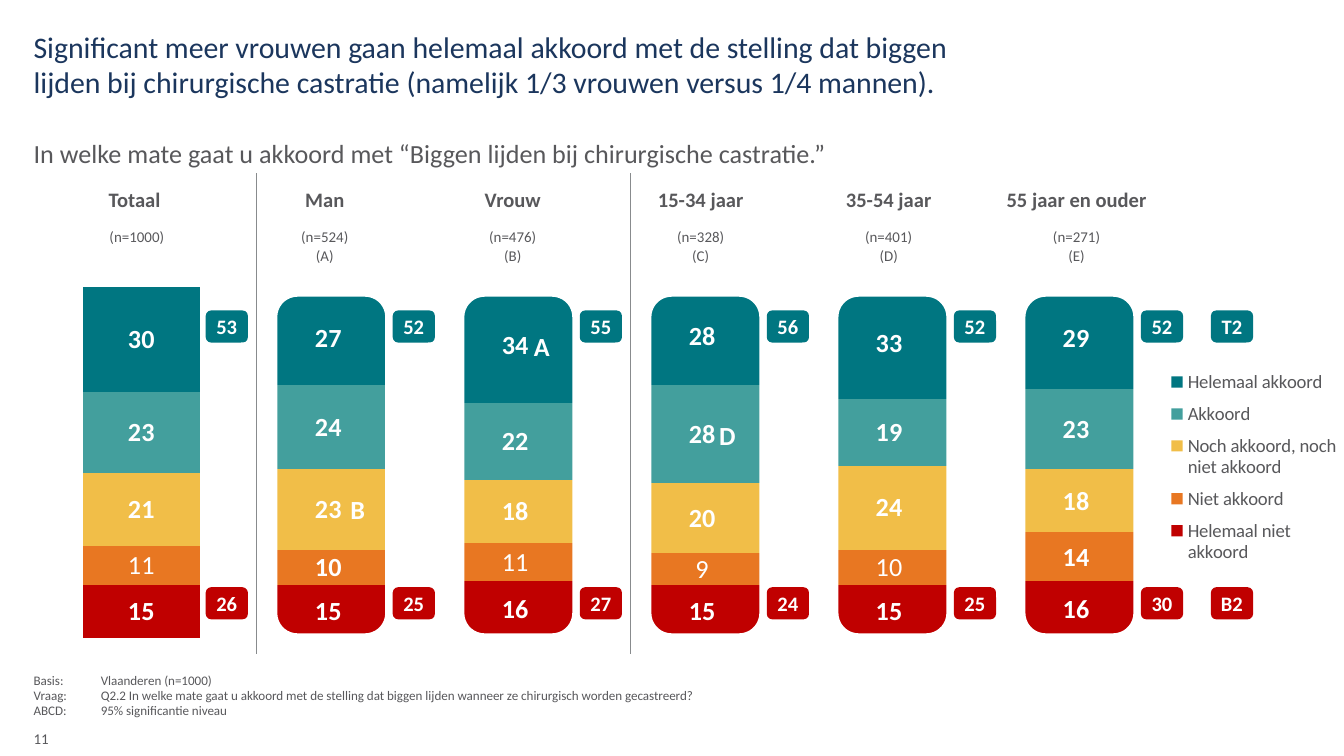
import math

import lxml.etree
import pptx
import pptx.chart.data
import pptx.dml.color
import pptx.enum.chart
import pptx.enum.shapes
import pptx.enum.text
import pptx.oxml
import pptx.oxml.ns
import pptx.util

Pt = pptx.util.Pt
RGBColor = pptx.dml.color.RGBColor
ALIGN = pptx.enum.text.PP_ALIGN
ANCHOR = pptx.enum.text.MSO_ANCHOR
qn = pptx.oxml.ns.qn

NAVY = RGBColor(0x1B, 0x36, 0x5D)
GREY = RGBColor(0x58, 0x58, 0x5B)
RULE = RGBColor(0x88, 0x8B, 0x8D)
WHITE = RGBColor(0xFF, 0xFF, 0xFF)
TEAL = RGBColor(0x00, 0x76, 0x81)
MINT = RGBColor(0x43, 0x9F, 0x9D)
YELLOW = RGBColor(0xF1, 0xBE, 0x48)
ORANGE = RGBColor(0xE8, 0x77, 0x22)
RED = RGBColor(0xC0, 0x00, 0x00)

PITCH = 100.2
HEADINGS = [
    ["Totaal ", "Man", "Vrouw", "15-34 jaar", "35-54 jaar", "55 jaar en ouder"],
    ["(n=1000)", "(n=524)", "(n=476)", "(n=328)", "(n=401)", "(n=271)"],
    ["", "(A)", "(B)", "(C)", "(D)", "(E)"],
]
SERIES = [
    ("Helemaal niet akkoord", [15, 15, 16, 15, 15, 16], RED, []),
    ("Niet akkoord", [11, 10, 11, 9, 10, 14], ORANGE, [0, 2, 3, 4]),
    ("Noch akkoord, noch niet akkoord", [21, 23, 18, 20, 24, 18], YELLOW, []),
    ("Akkoord", [23, 24, 22, 28, 19, 23], MINT, []),
    ("Helemaal akkoord", [30, 27, 34, 28, 33, 29], TEAL, []),
]
TOP_TWO = ["53", "52", "55", "56", "52", "52"]
BOTTOM_TWO = ["26", "25", "27", "24", "25", "30"]


class SlideBuilder:
    """Holds the style and the current slide and adds each kind of element."""

    def __init__(self, s, font="Calibri"):
        self.s = s
        self.font = font

    def style(self, font, size, color, bold=False):
        font.name, font.size, font.bold = self.font, Pt(size), bold
        font.color.rgb = color

    def add_lines(self, tf, lines, size, color, bold=False, align=ALIGN.LEFT, spacing=None):
        for i, line in enumerate(lines):
            p = tf.paragraphs[0] if i == 0 else tf.add_paragraph()
            p.alignment, p.space_before, p.line_spacing = align, Pt(0), spacing
            r = p.add_run()
            r.text = line
            self.style(r.font, size, color, bold)

    def frame_text(self, tf, anchor=ANCHOR.TOP, wrap=True, insets=(0, 0)):
        tf.margin_left = tf.margin_right = Pt(insets[0])
        tf.margin_top = tf.margin_bottom = Pt(insets[1])
        tf.auto_size = pptx.enum.text.MSO_AUTO_SIZE.NONE
        tf.vertical_anchor, tf.word_wrap = anchor, wrap

    def placeholder(self, idx, box, lines, size, color, spacing=None, tab=None):
        sp = self.s.placeholders[idx]
        sp.left, sp.top, sp.width, sp.height = map(Pt, box)
        self.frame_text(sp.text_frame)
        self.add_lines(sp.text_frame, lines, size, color, spacing=spacing)
        for p in sp.text_frame.paragraphs:
            pPr = p._p.get_or_add_pPr()
            pPr.set("marL", "0")
            pPr.set("indent", "0")
            lxml.etree.SubElement(pPr, qn("a:buNone"))
            if tab:
                tabs = lxml.etree.SubElement(pPr, qn("a:tabLst"))
                lxml.etree.SubElement(tabs, qn("a:tab"), pos=str(Pt(tab)), algn="l")

    def text(self, box, text, size, color, **kw):
        sp = self.s.shapes.add_textbox(*map(Pt, box))
        self.frame_text(sp.text_frame, kw.pop("anchor", ANCHOR.TOP), False)
        self.add_lines(sp.text_frame, [text], size, color, **kw)

    def table(self, box, rows, heights):
        table = self.s.shapes.add_table(len(rows), len(rows[0]), *map(Pt, box)).table
        table.first_row = table.horz_banding = False
        for i, (row, height) in enumerate(zip(rows, heights)):
            table.rows[i].height = Pt(height)
            for j, text in enumerate(row):
                cell = table.cell(i, j)
                cell.fill.background()
                cell.vertical_anchor = ANCHOR.MIDDLE
                cell.margin_left = cell.margin_right = cell.margin_top = cell.margin_bottom = 0
                if text:
                    self.add_lines(cell.text_frame, [text], 8 if i else 11, GREY, i == 0, ALIGN.CENTER)
                else:
                    p = cell.text_frame.paragraphs[0]
                    lxml.etree.SubElement(p._p, qn("a:endParaRPr"), sz="800")

    def layout(self, parent, index, **values):
        for old in parent.findall(qn("c:layout")):
            parent.remove(old)
        layout = lxml.etree.Element(qn("c:layout"))
        manual = lxml.etree.SubElement(layout, qn("c:manualLayout"))
        for tag, value in values.items():
            lxml.etree.SubElement(manual, qn("c:" + tag), val=str(value))
        parent.insert(index, layout)

    def chart(self, box, series):
        data = pptx.chart.data.CategoryChartData()
        data.categories = ["1", "2", "3", "4", "5", "6"]
        for name, values, _, _ in series:
            data.add_series(name, values)
        kind = pptx.enum.chart.XL_CHART_TYPE.COLUMN_STACKED
        chart = self.s.shapes.add_chart(kind, *map(Pt, box), data).chart
        chart.font.name, chart.font.size = self.font, Pt(18)
        chart.has_title = False
        chart.value_axis.minimum_scale, chart.value_axis.maximum_scale = 0, 100
        chart.value_axis.has_major_gridlines = False
        chart.value_axis.visible = chart.category_axis.visible = False
        plot = chart.plots[0]
        plot.gap_width, plot.overlap, plot.vary_by_categories = 60, 100, False
        center = pptx.enum.chart.XL_LABEL_POSITION.CENTER
        for ser, (_, _, color, light_points) in zip(plot.series, series):
            ser.format.fill.solid()
            ser.format.fill.fore_color.rgb = color
            labels = ser.data_labels
            labels.show_value, labels.position = True, center
            labels.number_format, labels.number_format_is_linked = "0;;", False
            self.style(labels.font, 14, WHITE, True)
            for i in light_points:
                label = ser.points[i].data_label
                self.style(label.font, 14, WHITE)
                label.position = center
        chart.has_legend = True
        chart.legend.position = pptx.enum.chart.XL_LEGEND_POSITION.RIGHT
        chart.legend.include_in_layout = False
        self.style(chart.legend.font, 10, GREY)
        self.layout(chart.element.find(".//" + qn("c:plotArea")), 0, layoutTarget="inner",
                    xMode="edge", yMode="edge", x=0.011, y=0.01, w=0.856, h=0.955)
        self.layout(chart.element.find(".//" + qn("c:legend")), 1,
                    xMode="edge", yMode="edge", x=0.865, y=0.21, w=0.135, h=0.58)

    def rounded_frame(self, x, y, w, h, dx=8.2, dy=9.2, radius=10.8):
        centers = [(w - dx - radius, h - dy - radius), (dx + radius, h - dy - radius),
                   (dx + radius, dy + radius), (w - dx - radius, dy + radius)]
        hole = []
        for quarter, (cx, cy) in enumerate(centers):
            for step in range(0, 91, 10):
                angle = math.radians(90 * quarter + step)
                hole.append((Pt(x + cx + radius * math.cos(angle)),
                             Pt(y + cy + radius * math.sin(angle))))
        outer = [(Pt(x + a), Pt(y + b)) for a, b in ((0, 0), (w, 0), (w, h), (0, h))]
        fb = self.s.shapes.build_freeform(*hole[0])
        fb.add_line_segments(hole[1:], close=True)
        fb.move_to(*outer[0])
        fb.add_line_segments(outer[1:], close=True)
        self.paint(fb.convert_to_shape(), WHITE)

    def paint(self, sp, color):
        sp.shadow.inherit = False
        sp.fill.solid()
        sp.fill.fore_color.rgb = color
        sp.line.fill.background()

    def badge(self, x, y, text, color):
        kind = pptx.enum.shapes.MSO_SHAPE.ROUNDED_RECTANGLE
        sp = self.s.shapes.add_shape(kind, Pt(x), Pt(y), Pt(22.6), Pt(17.2))
        self.paint(sp, color)
        self.frame_text(sp.text_frame, ANCHOR.MIDDLE, False, (5, 2.2))
        self.add_lines(sp.text_frame, [text], 11, WHITE, True, ALIGN.CENTER)

    def divider(self, x, top, bottom):
        kind = pptx.enum.shapes.MSO_CONNECTOR.STRAIGHT
        line = self.s.shapes.add_connector(kind, Pt(x), Pt(top), Pt(x), Pt(bottom))
        line.line.color.rgb, line.line.width = RULE, Pt(0.5)
        lxml.etree.SubElement(line._element.spPr, qn("a:effectLst"))


def main():
    prs = pptx.Presentation()
    prs.slide_width, prs.slide_height = Pt(720), Pt(405)
    b = SlideBuilder(prs.slides.add_slide(prs.slide_layouts[3]))
    b.placeholder(0, (18, 75.6, 680.4, 14.4), [
        "In welke mate gaat u akkoord met “Biggen lijden bij chirurgische castratie.”"], 14, GREY, 0.9)
    b.placeholder(1, (18, 15.1, 523.4, 42.5), [
        "Significant meer vrouwen gaan helemaal akkoord met de stelling dat biggen lijden bij "
        "chirurgische castratie (namelijk 1/3 vrouwen versus 1/4 mannen)."], 16, NAVY)
    b.placeholder(2, (18, 360.7, 529.2, 25.2), [
        "Basis:\tVlaanderen (n=1000)",
        "Vraag:\tQ2.2 In welke mate gaat u akkoord met de stelling dat biggen lijden wanneer ze "
        "chirurgisch worden gecastreerd?",
        "ABCD:\t95% significantie niveau"], 7, GREY, Pt(8), 72.6)
    b.text((18, 381.6, 24.5, 18.7), "11", 8, GREY, anchor=ANCHOR.BOTTOM, spacing=0.85)
    b.table((23, 92.9, 604.2, 49), HEADINGS, (29.5, 9.75, 9.75))
    b.chart((18, 151.9, 702, 196.6), SERIES)
    for i in range(5):
        b.rounded_frame(140.4 + PITCH * i, 149.8, 74.2, 198.7)
    for y, color, values, name in ((166.3, TEAL, TOP_TWO, "T2"), (314.6, RED, BOTTOM_TWO, "B2")):
        for i, value in enumerate(values):
            b.badge(110.2 + PITCH * i, y, value, color)
        b.badge(648.7, y, name, color)
    for x in (137.5, 337.7):
        b.divider(x, 92.9, 350.6)
    for x, y, letter in ((187.2, 264.2, "B"), (285.8, 177.1, "A"), (385.2, 224.6, "D")):
        b.text((x, y, 9, 17.3), letter, 14, WHITE, bold=True, align=ALIGN.CENTER)
    prs.save("out.pptx")


if __name__ == "__main__":
    main()
